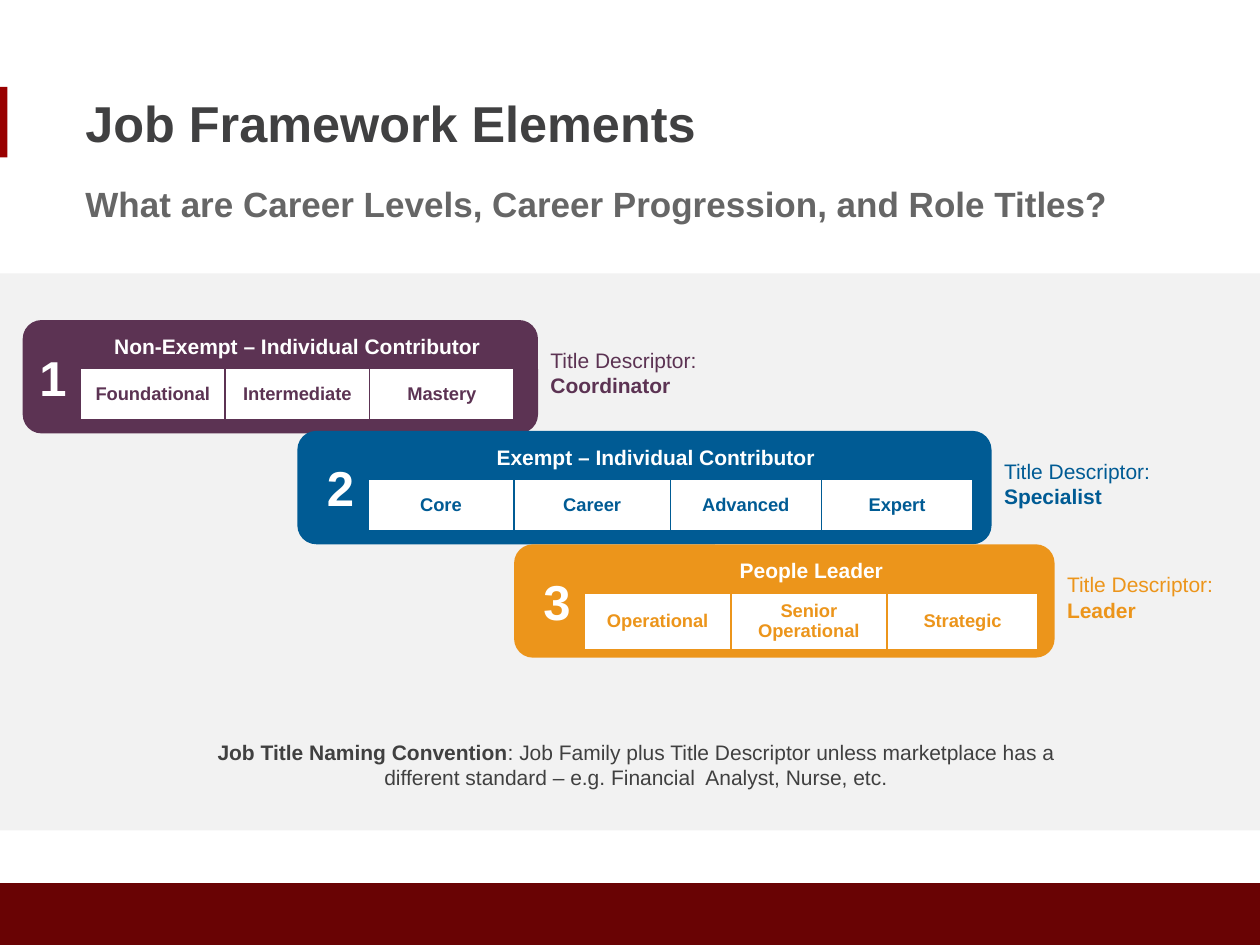
import pptx
import pptx.dml.color
import pptx.enum.shapes
import pptx.enum.text
import pptx.oxml
import pptx.util
from lxml import etree

COLS, ROWS = 100, 75
UNIT = pptx.util.Inches(0.1)
FONT = "Arial"
HEX = {
    "accent": "990000", "footer": "690304", "panel": "F2F2F2",
    "title": "404041", "note": "404040", "subtitle": "666666",
    "white": "FFFFFF", "plum": "5C3353", "blue": "005B94", "gold": "EC951B",
}
ALIGN = pptx.enum.text.PP_ALIGN
ANCHOR = pptx.enum.text.MSO_ANCHOR
SHAPE = pptx.enum.shapes.MSO_SHAPE


def grid(*cells):
    """Turn grid cells into slide lengths."""
    return [round(cell * UNIT) for cell in cells]


def color(name):
    """Look up a colour by name."""
    return pptx.dml.color.RGBColor.from_string(HEX[name])


def style(font, size, name, bold=None):
    """Set a font's face, size, colour and weight."""
    font.name = FONT
    font.size = pptx.util.Pt(size)
    font.color.rgb = color(name)
    font.bold = bold


def block(slide, kind, area, name):
    """Add a plain filled shape."""
    shape = slide.shapes.add_shape(kind, *grid(*area))
    shape.shadow.inherit = False
    shape.fill.solid()
    shape.fill.fore_color.rgb = color(name)
    shape.line.fill.background()


def label(slide, area, runs, size, name, align=ALIGN.LEFT, anchor=ANCHOR.TOP):
    """Add wrapped text from pairs of wording and weight."""
    frame = slide.shapes.add_textbox(*grid(*area)).text_frame
    frame.word_wrap = True
    frame.vertical_anchor = anchor
    para = frame.paragraphs[0]
    para.alignment = align
    same = len({bold for _, bold in runs}) == 1
    style(para.font, size, name, runs[0][1] if same else None)
    for text, bold in runs:
        run = para.add_run()
        run.text = text
        if not same:
            run.font.bold = bold


def border(cell, name):
    """Draw a thin line on each side of a cell."""
    props = cell._tc.get_or_add_tcPr()
    for spot, side in enumerate(("lnL", "lnR", "lnT", "lnB")):
        line = etree.Element(pptx.oxml.ns.qn("a:" + side), w="12700")
        fill = etree.SubElement(line, pptx.oxml.ns.qn("a:solidFill"))
        etree.SubElement(fill, pptx.oxml.ns.qn("a:srgbClr"), val=HEX[name])
        props.insert(spot, line)


def levels(slide, left, top, high, wide, names, tint):
    """Add a one-row table of career levels."""
    area = grid(left, top, sum(wide), high)
    table = slide.shapes.add_table(1, len(names), *area).table
    table.first_row = table.horz_banding = False
    for col, width, text in zip(table.columns, wide, names):
        col.width = grid(width)[0]
    for cell, text in zip(table.rows[0].cells, names):
        cell.text = text
        cell.vertical_anchor = ANCHOR.MIDDLE
        cell.fill.solid()
        cell.fill.fore_color.rgb = color("white")
        border(cell, tint)
        para = cell.text_frame.paragraphs[0]
        para.alignment = ALIGN.CENTER
        style(para.font, 10.5, tint, True)


def card(slide, num, area, inset, shift, high, wide, head, names, role, tint):
    """Add a career track with its number, levels and role title."""
    left, top, width = area
    start = left + inset
    block(slide, SHAPE.ROUNDED_RECTANGLE, (left, top, width, 9), tint)
    levels(slide, start, top + 3.85, high, wide, names, tint)
    label(slide, (start + shift, top + 0.55, sum(wide), 3),
          [(head, True)], 12, "white", ALIGN.CENTER)
    label(slide, (left + width, top + 1.7, 15.5, 5),
          [("Title Descriptor: ", False), (role, True)], 12, tint)
    label(slide, (start - 4.25, top + 1.65, 3.9, 5.7),
          [(str(num), True)], 28, "white", ALIGN.CENTER)


def main():
    """Build and save the slide."""
    deck = pptx.Presentation()
    deck.slide_width, deck.slide_height = grid(COLS, ROWS)
    slide = deck.slides.add_slide(deck.slide_layouts[6])
    block(slide, SHAPE.RECTANGLE, (0, 6.9, 0.6, 5.6), "accent")
    block(slide, SHAPE.RECTANGLE, (0, 70.1, COLS, 4.9), "footer")
    block(slide, SHAPE.RECTANGLE, (0, 21.7, COLS, 44.2), "panel")
    label(slide, (5.8, 6.9, 87.5, 5.6), [("Job Framework Elements", True)],
          28.8, "title", anchor=ANCHOR.MIDDLE)
    label(slide, (14, 58.2, 73, 5),
          [("Job Title Naming Convention", True),
           (": Job Family plus Title Descriptor unless marketplace has a "
            "different standard – e.g. Financial  Analyst, Nurse, etc.", False)],
          12, "note", ALIGN.CENTER)
    label(slide, (5.8, 13.1, 89.4, 6.1),
          [("What are Career Levels, Career Progression, and Role Titles?", True)],
          20, "subtitle", anchor=ANCHOR.MIDDLE)
    tracks = [
        ((1.8, 25.4, 40.9), 4.6, 0, 4.1, (11.47,) * 3,
         "Non-Exempt – Individual Contributor",
         ("Foundational", "Intermediate", "Mastery"), "Coordinator", "plum"),
        ((23.6, 34.2, 55.1), 5.6, -1.15, 4.1, (11.6, 12.4, 12, 12),
         "Exempt – Individual Contributor",
         ("Core", "Career", "Advanced", "Expert"), "Specialist", "blue"),
        ((40.8, 43.2, 42.9), 5.6, 0, 4.5, (11.6, 12.4, 12), "People Leader",
         ("Operational", "Senior Operational", "Strategic"), "Leader", "gold"),
    ]
    for num, track in enumerate(tracks, 1):
        card(slide, num, *track)
    deck.save("out.pptx")


if __name__ == "__main__":
    main()
